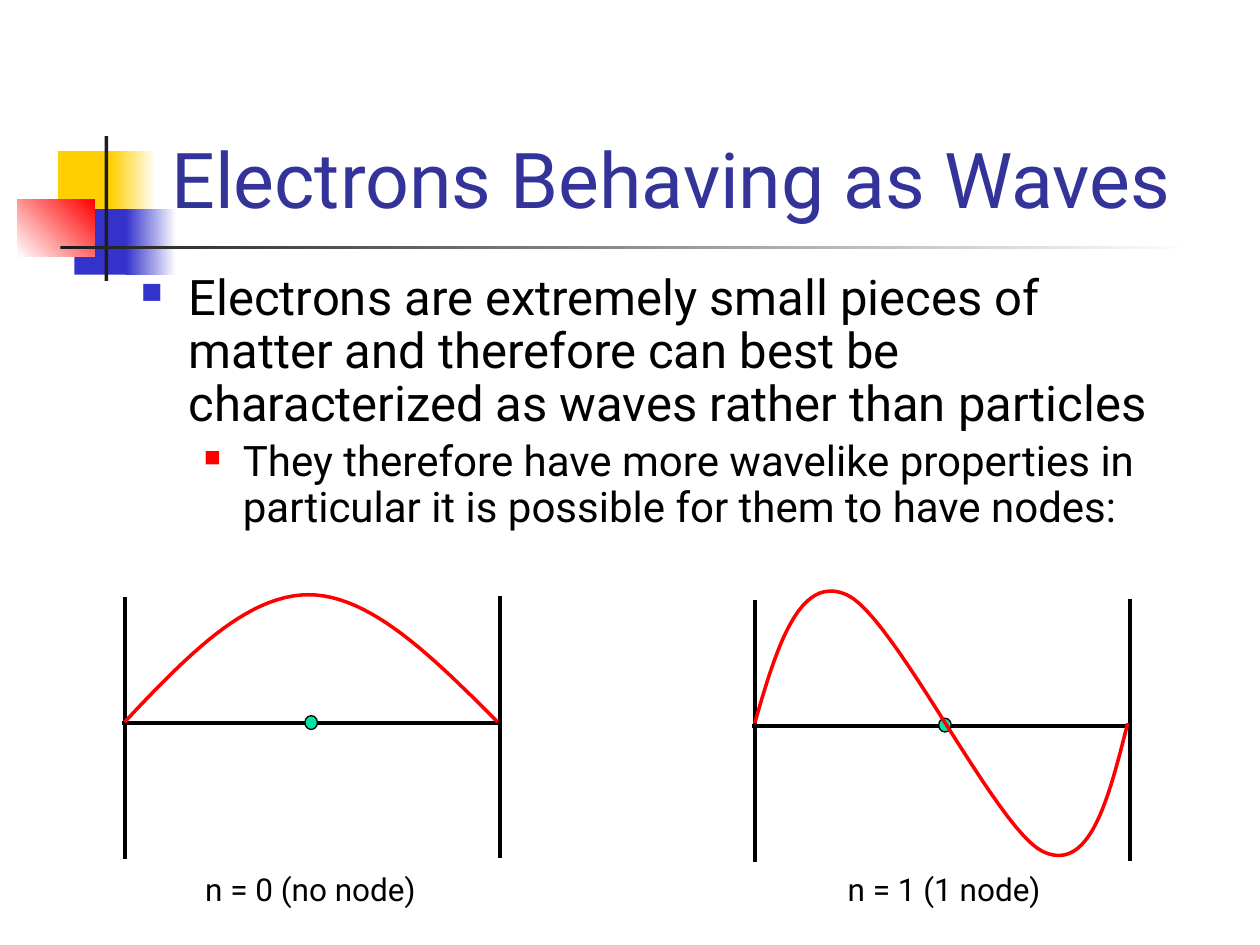
"""Build the slide "Electrons Behaving as Waves" with two standing-wave diagrams."""
import lxml.etree
import pptx
import pptx.dml.color
import pptx.enum.shapes
import pptx.enum.text
import pptx.oxml.ns
import pptx.util

THEME = {
    "font": "Roboto", "title": "333399", "text": "000000", "yellow": "FFCF01",
    "blue": "3333CC", "red": "FF0000", "white": "FFFFFF", "dark": "1C1C1C",
    "node": "00E4A8", "title_size": 44, "body_size": 28, "sub_size": 24,
    "label_size": 18, "axis_width": 2.25, "wave_width": 2, "node_width": 0.75,
}
RGB = {k: pptx.dml.color.RGBColor.from_string(v)
       for k, v in THEME.items() if isinstance(v, str) and k != "font"}
SHAPE = pptx.enum.shapes.MSO_SHAPE
qn = pptx.oxml.ns.qn

prs = pptx.Presentation()
prs.slide_width = pptx.util.Inches(10)
prs.slide_height = pptx.util.Inches(7.5)
COL = prs.slide_width / 10
ROW = prs.slide_height / 7.5


def grid(x, y, *size):
    """Turn columns and rows into slide lengths."""
    return [round(v * unit) for v, unit in zip((x, y, *size), (COL, ROW, COL, ROW))]


def style(p, size, color):
    """Format every run of a paragraph."""
    for r in p.runs:
        r.font.name = THEME["font"]
        r.font.size = pptx.util.Pt(THEME[size])
        r.font.color.rgb = RGB[color]


s = prs.slides.add_slide(prs.slide_layouts[5])
title = s.shapes.title

for box, colors, angle in [
    ((0.46, 1.2, 0.48, 0.52), ["yellow"], 0),
    ((0.88, 1.2, 0.36, 0.52), ["yellow", "white"], 0),
    ((0.59, 1.66, 0.46, 0.52), ["blue"], 0),
    ((1, 1.66, 0.4, 0.52), ["blue", "white"], 0),
    ((0.14, 1.58, 0.61, 0.46), ["white", "red"], 45),
    ((0.83, 1.08, 0.03, 1.15), ["dark"], 0),
    ((0.48, 1.95, 9, 0.03), ["dark", "white"], 0),
]:
    sp = s.shapes.add_shape(SHAPE.RECTANGLE, *grid(*box))
    sp.shadow.inherit = False
    sp.line.fill.background()
    if len(colors) == 1:
        sp.fill.solid()
        sp.fill.fore_color.rgb = RGB[colors[0]]
    else:
        sp.fill.gradient()
        sp.fill.gradient_angle = angle
        for stop, color in zip(sp.fill.gradient_stops, colors):
            stop.color.rgb = RGB[color]

title.element.getparent().append(title.element)
title.left, title.top, title.width, title.height = grid(1.26, 0.23, 8.52, 1.6)
tf = title.text_frame
tf.text = "Electrons Behaving as Waves"
tf.auto_size = pptx.enum.text.MSO_AUTO_SIZE.NONE
tf.vertical_anchor = pptx.enum.text.MSO_ANCHOR.BOTTOM
tf.paragraphs[0].alignment = pptx.enum.text.PP_ALIGN.LEFT
style(tf.paragraphs[0], "title_size", "title")

tf = s.shapes.add_textbox(*grid(1.02, 2.12, 8.5, 2.2)).text_frame
tf.word_wrap = True
for i, (text, size, bullet, percent, margin, indent) in enumerate([
    ("Electrons are extremely small pieces of matter and therefore can best be "
     "characterized as waves rather than particles", "body_size", "blue", 60, 0.38, -0.38),
    ("They therefore have more wavelike properties in particular it is possible "
     "for them to have nodes:", "sub_size", "red", 55, 0.81, -0.31),
]):
    p = tf.add_paragraph() if i else tf.paragraphs[0]
    p.text = text
    p.level = i
    p.line_spacing = 0.9
    p.space_before = pptx.util.Pt(round(0.2 * THEME[size], 1))
    style(p, size, "text")
    pPr = p._p.get_or_add_pPr()
    pPr.set("marL", str(round(margin * COL)))
    pPr.set("indent", str(round(indent * COL)))
    buClr = lxml.etree.SubElement(pPr, qn("a:buClr"))
    lxml.etree.SubElement(buClr, qn("a:srgbClr"), val=THEME[bullet])
    lxml.etree.SubElement(pPr, qn("a:buSzPct"), val=str(percent * 1000))
    lxml.etree.SubElement(pPr, qn("a:buChar"), char="■")

STEPS = 24
for x, y, node, wave, label, label_box in [
    (0.99, 5.74, 1.43,
     [(0, -0.01), (0.48, -0.52), (0.96, -1.02), (1.46, -1.02),
      (1.95, -1.02), (2.45, -0.52), (2.96, -0.01)],
     "n = 0 (no node)", (1.53, 6.86, 1.9, 0.4)),
    (5.99, 5.76, 1.46,
     [(0, -0.02), (0.17, -0.61), (0.35, -1.21), (0.73, -1.04), (1.11, -0.87),
      (1.92, 0.83), (2.29, 1), (2.66, 1.17), (2.81, 0.58), (2.96, -0.02)],
     "n = 1 (1 node)", (6.63, 6.86, 1.76, 0.4)),
]:
    group = s.shapes.add_group_shape().shapes
    for x1, y1, x2, y2 in [(0, -1, 0, 1.08), (2.98, -1.01, 2.98, 1.07), (-0.02, 0, 2.98, 0)]:
        line = group.add_connector(pptx.enum.shapes.MSO_CONNECTOR.STRAIGHT,
                                   *grid(x + x1, y + y1), *grid(x + x2, y + y2))
        line.line.color.rgb = RGB["text"]
        line.line.width = pptx.util.Pt(THEME["axis_width"])
        lxml.etree.SubElement(line.element.spPr, qn("a:effectLst"))

    sp = group.add_shape(SHAPE.OVAL, *grid(x + node, y - 0.06, 0.1, 0.11))
    sp.shadow.inherit = False
    sp.fill.solid()
    sp.fill.fore_color.rgb = RGB["node"]
    sp.line.color.rgb = RGB["text"]
    sp.line.width = pptx.util.Pt(THEME["node_width"])

    points = []
    for k in range(0, len(wave) - 1, 3):
        for t in (n / STEPS for n in range(1, STEPS + 1)):
            weights = ((1 - t) ** 3, 3 * t * (1 - t) ** 2, 3 * t ** 2 * (1 - t), t ** 3)
            dx, dy = (sum(w * c for w, c in zip(weights, axis))
                      for axis in zip(*wave[k:k + 4]))
            points.append(grid(x + dx, y + dy))
    builder = group.build_freeform(*grid(x + wave[0][0], y + wave[0][1]))
    builder.add_line_segments(points, close=False)
    sp = builder.convert_to_shape()
    sp.shadow.inherit = False
    sp.fill.background()
    sp.line.color.rgb = RGB["red"]
    sp.line.width = pptx.util.Pt(THEME["wave_width"])

    tf = group.add_textbox(*grid(*label_box)).text_frame
    tf.word_wrap = False
    tf.auto_size = pptx.enum.text.MSO_AUTO_SIZE.SHAPE_TO_FIT_TEXT
    tf.text = label
    style(tf.paragraphs[0], "label_size", "text")

prs.save("out.pptx")
